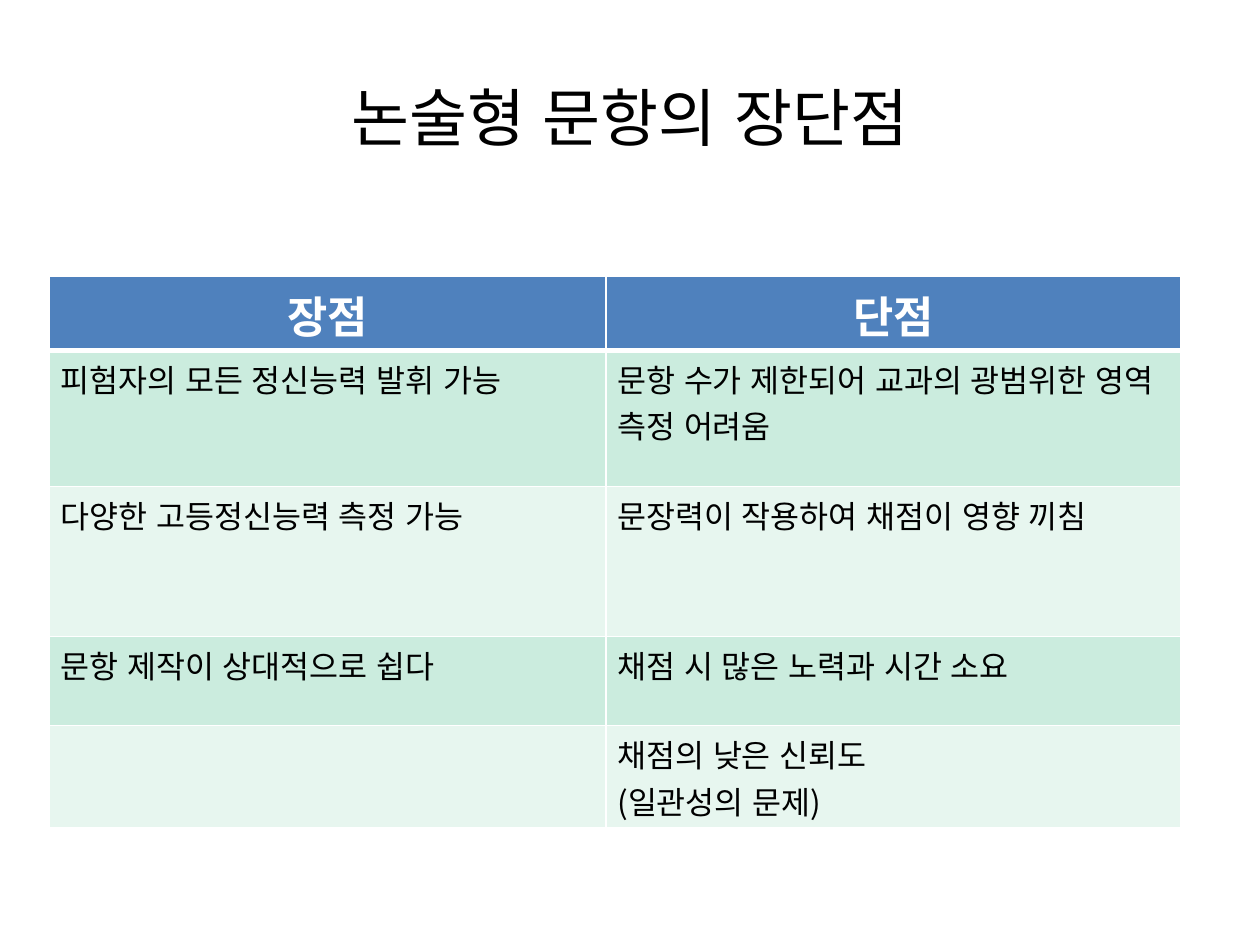
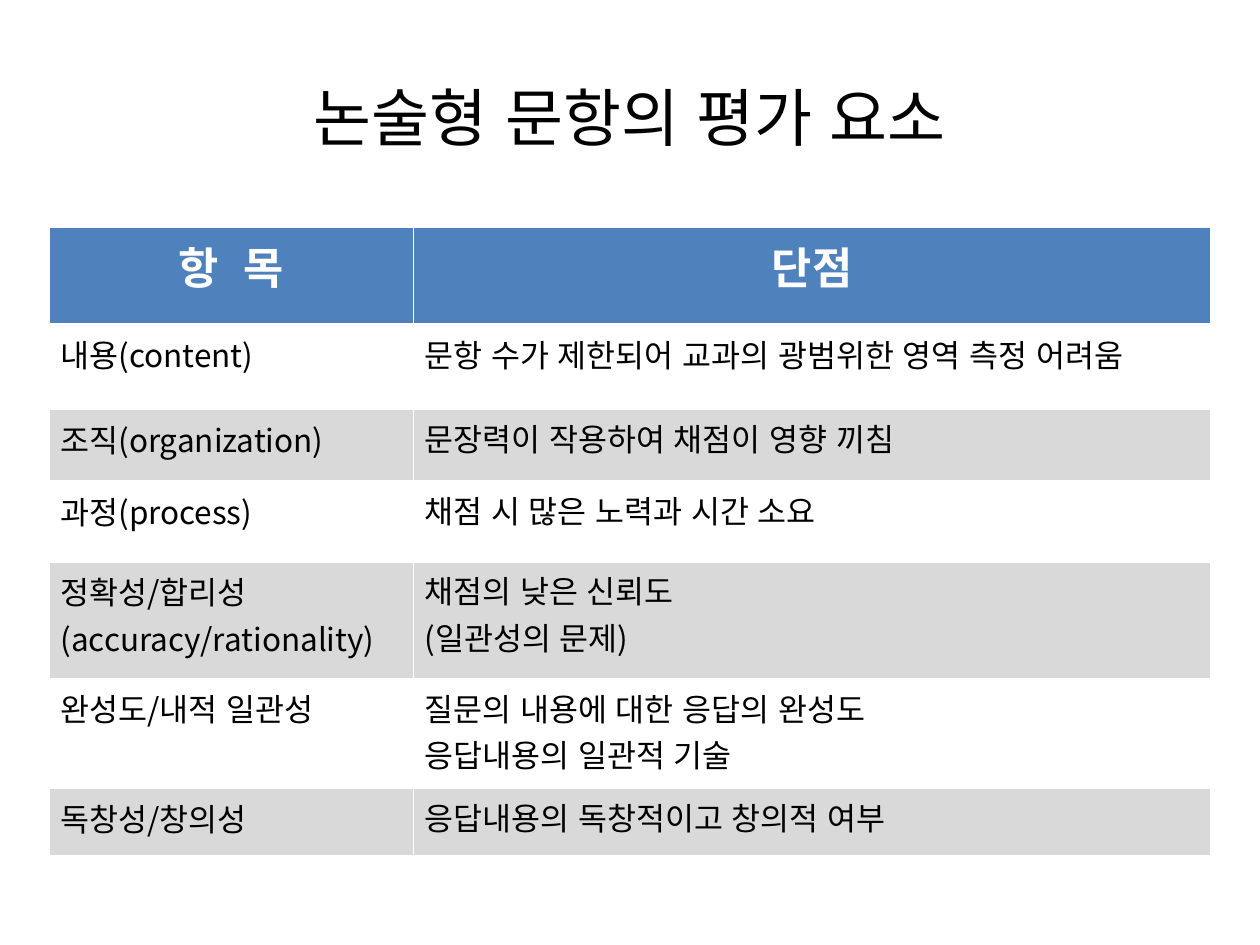
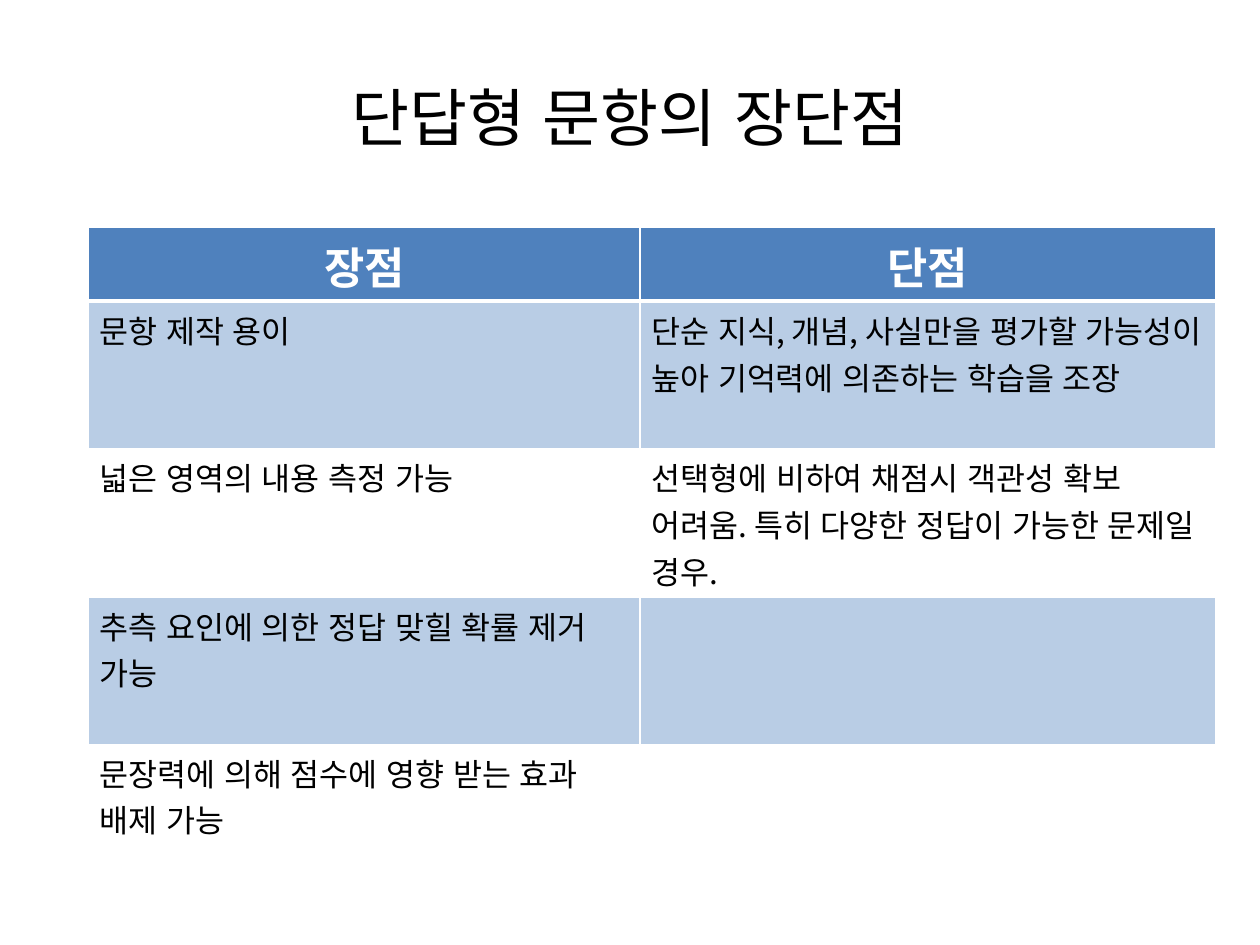
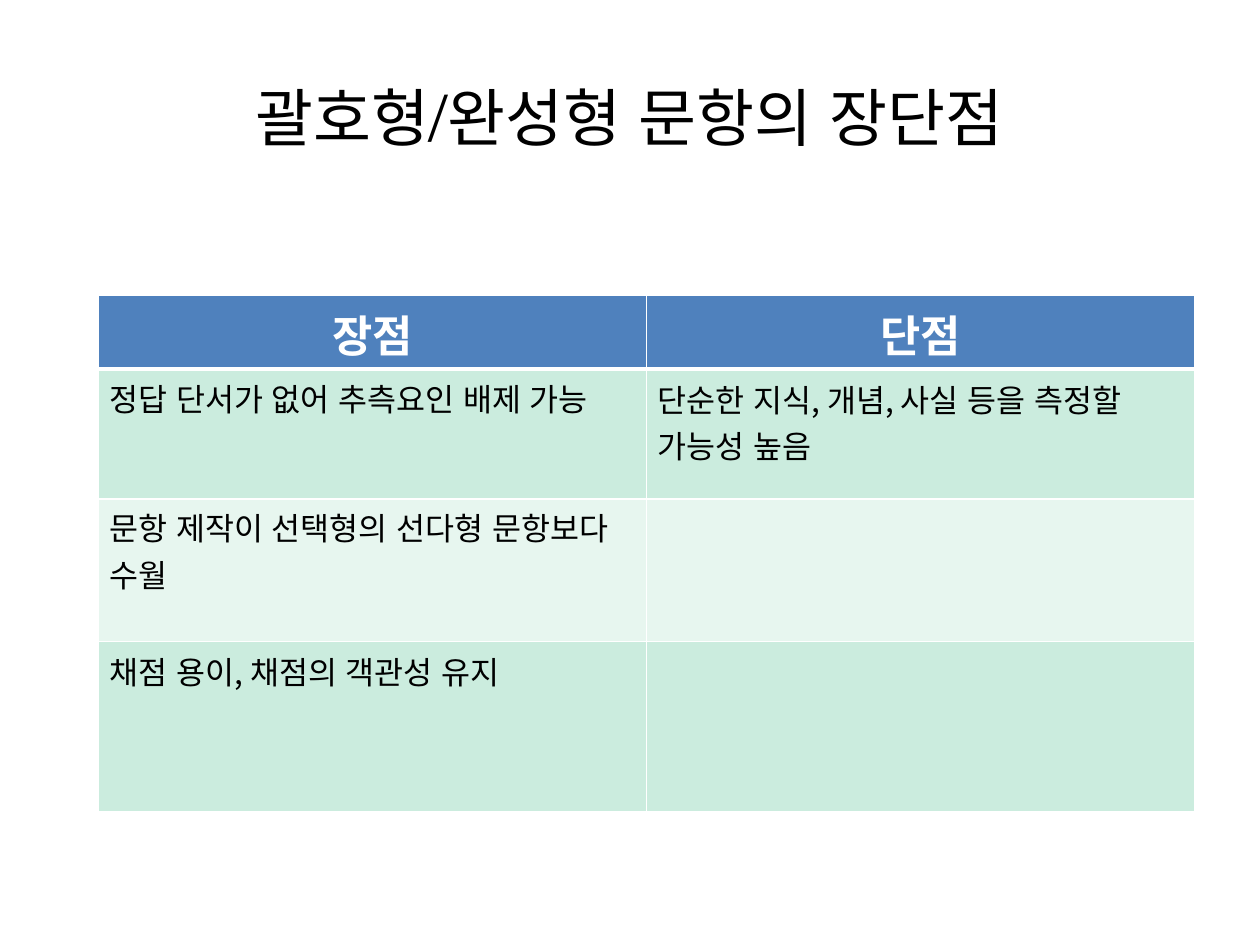
from pptx import Presentation
from pptx.dml.color import RGBColor
from pptx.enum.text import MSO_ANCHOR, PP_ALIGN
from pptx.oxml.ns import qn
from pptx.util import Pt
from lxml.etree import SubElement

# Style
SCALE = 9144  # 100 px to the inch
BLACK = RGBColor(0x00, 0x00, 0x00)
WHITE = RGBColor(0xFF, 0xFF, 0xFF)
BLUE = RGBColor(0x4F, 0x81, 0xBD)
PALE = RGBColor(0xB9, 0xCD, 0xE5)
GRAY = RGBColor(0xD9, 0xD9, 0xD9)
MINT = RGBColor(0xCB, 0xEC, 0xDE)
LIGHT = RGBColor(0xE7, 0xF6, 0xEF)
SANS = "Noto Sans CJK KR"
SERIF = "TeX Gyre Schola"


def px(size):
    return size * SCALE


def write(frame, text, size=18, color=BLACK, bold=False, align=PP_ALIGN.LEFT, font=SANS):
    """Fill a text frame, one paragraph per line of text."""
    for row, line in enumerate(text.split("\n")):
        para = frame.add_paragraph() if row else frame.paragraphs[0]
        para.alignment = align
        run = para.add_run()
        run.text = line
        run.font.size = Pt(size)
        run.font.bold = bold
        run.font.name = font
        run.font.color.rgb = color
        # The serif face sets the width of spaces between Korean words
        SubElement(run.font._element, qn("a:ea"), typeface=SERIF)


def border(cell, **widths):
    """Draw white cell borders; widths are points by side, in L R T B order."""
    props = cell._tc.get_or_add_tcPr()
    for side, width in widths.items():
        line = SubElement(props, qn("a:ln" + side), w=str(Pt(width)))
        fill = SubElement(line, qn("a:solidFill"))
        SubElement(fill, qn("a:srgbClr"), val=str(WHITE))


class Deck:
    def __init__(self):
        self.file = Presentation()
        self.file.slide_width, self.file.slide_height = px(1000), px(750)
        self.slide = None

    def page(self, title):
        self.slide = self.file.slides.add_slide(self.file.slide_layouts[6])
        frame = self.slide.shapes.add_textbox(px(50), px(30), px(900), px(125)).text_frame
        frame.word_wrap = True
        frame.vertical_anchor = MSO_ANCHOR.MIDDLE
        write(frame, title, size=36, align=PP_ALIGN.CENTER, font=SERIF)

    def table(self, left, top, cols, rows, bands, texts):
        grid = self.slide.shapes.add_table(
            len(rows), len(cols), px(left), px(top), px(sum(cols)), px(sum(rows))).table
        grid.horz_banding = False
        for col, width in zip(grid.columns, cols):
            col.width = px(width)
        for num, (row, high, line) in enumerate(zip(grid.rows, rows, texts)):
            row.height = px(high)
            for cell, text in zip(row.cells, line):
                self.cell(cell, text, num, bands)

    def cell(self, cell, text, num, bands):
        head = num == 0
        cell.margin_left = cell.margin_right = px(9)
        cell.margin_top = cell.margin_bottom = px(5)
        border(cell, L=1, R=1, T=3 if num == 1 else 1, B=3 if head else 1)
        color = BLUE if head else bands[(num - 1) % 2]
        if color is None:
            cell.fill.background()
        else:
            cell.fill.solid()
            cell.fill.fore_color.rgb = color
        if head:
            write(cell.text_frame, text, size=25, color=WHITE, bold=True, align=PP_ALIGN.CENTER)
        elif text:
            write(cell.text_frame, text)


def main():
    deck = Deck()
    pair = ("장점", "단점")

    # Essay items: strengths and weaknesses
    deck.page("논술형 문항의 장단점")
    deck.table(39, 219, (442, 456), (59, 108, 119, 71, 81), (MINT, LIGHT), (
        pair,
        ("피험자의 모든 정신능력 발휘 가능", "문항 수가 제한되어 교과의 광범위한 영역 측정 어려움"),
        ("다양한 고등정신능력 측정 가능", "문장력이 작용하여 채점이 영향 끼침"),
        ("문항 제작이 상대적으로 쉽다", "채점 시 많은 노력과 시간 소요"),
        ("", "채점의 낮은 신뢰도\n(일관성의 문제)"),
    ))

    # Essay items: what is assessed
    deck.page("논술형 문항의 평가 요소")
    deck.table(39, 180, (289, 633), (78, 67, 57, 64, 93, 87, 53), (None, GRAY), (
        ("항  목", "단점"),
        ("내용(content)", "문항 수가 제한되어 교과의 광범위한 영역 측정 어려움"),
        ("조직(organization)", "문장력이 작용하여 채점이 영향 끼침"),
        ("과정(process)", "채점 시 많은 노력과 시간 소요"),
        ("정확성/합리성\n(accuracy/rationality)", "채점의 낮은 신뢰도\n(일관성의 문제)"),
        ("완성도/내적 일관성", "질문의 내용에 대한 응답의 완성도\n응답내용의 일관적 기술"),
        ("독창성/창의성", "응답내용의 독창적이고 창의적 여부"),
    ))

    # Short-answer items
    deck.page("단답형 문항의 장단점")
    deck.table(70, 180, (438, 457), (59, 117, 118, 117, 81), (PALE, None), (
        pair,
        ("문항 제작 용이",
         "단순 지식, 개념, 사실만을 평가할 가능성이 높아 기억력에 의존하는 학습을 조장"),
        ("넓은 영역의 내용 측정 가능",
         "선택형에 비하여 채점시 객관성 확보 어려움. 특히 다양한 정답이 가능한 문제일 경우."),
        ("추측 요인에 의한 정답 맞힐 확률 제거 가능", ""),
        ("문장력에 의해 점수에 영향 받는 효과 배제 가능", ""),
    ))

    # Bracket and completion items
    deck.page("괄호형/완성형 문항의 장단점")
    deck.table(78, 234, (435, 435), (59, 103, 113, 135), (MINT, LIGHT), (
        pair,
        ("정답 단서가 없어 추측요인 배제 가능", "단순한 지식, 개념, 사실 등을 측정할 가능성 높음"),
        ("문항 제작이 선택형의 선다형 문항보다 수월", ""),
        ("채점 용이, 채점의 객관성 유지", ""),
    ))

    deck.file.save("out.pptx")


if __name__ == "__main__":
    main()
